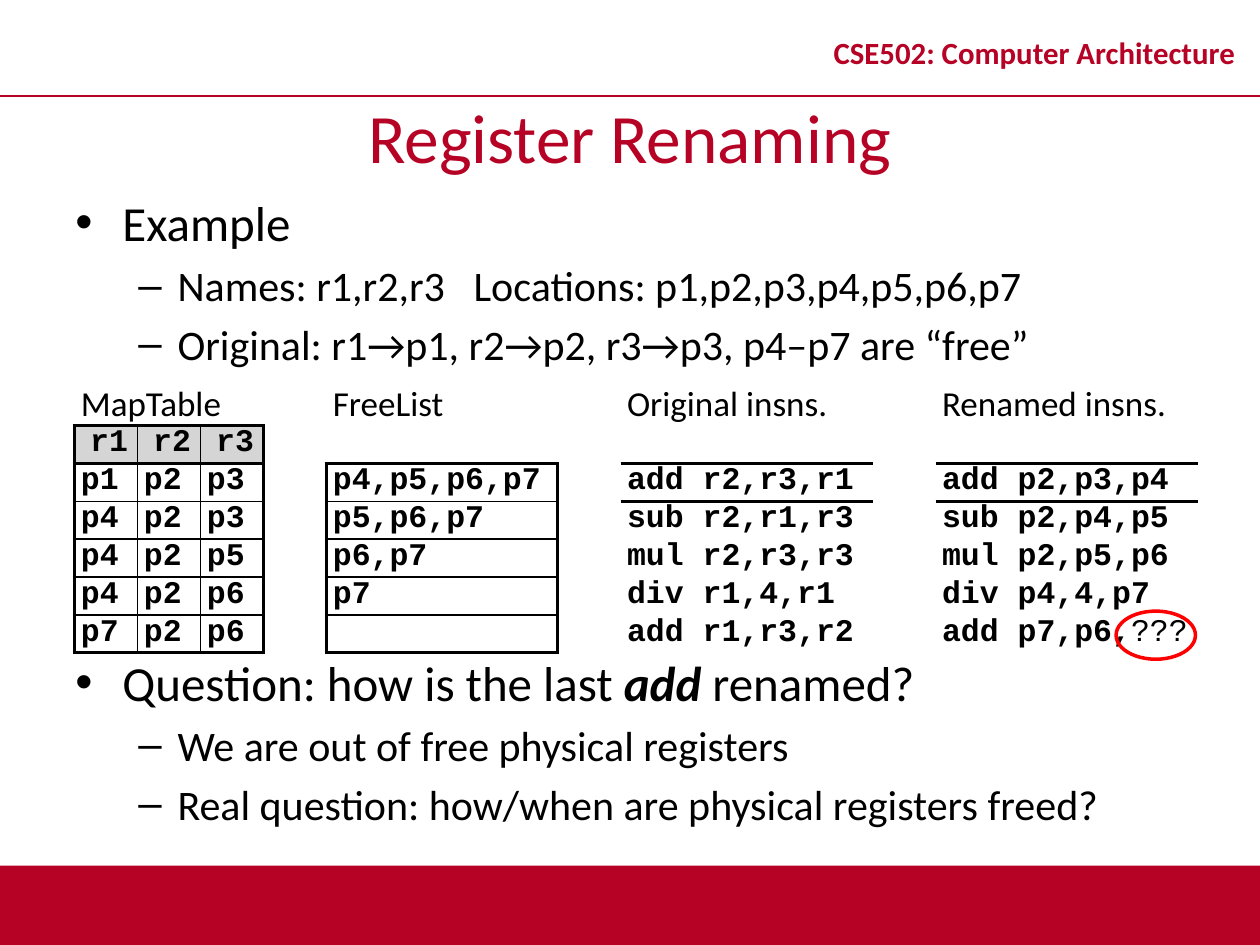
from dataclasses import dataclass

from lxml.etree import SubElement
from pptx import Presentation
from pptx.dml.color import RGBColor
from pptx.enum.shapes import MSO_CONNECTOR, MSO_SHAPE
from pptx.enum.text import MSO_ANCHOR, MSO_AUTO_SIZE, PP_ALIGN
from pptx.oxml.ns import qn
from pptx.util import Cm, Pt

RED = "B60225"
BLACK = "000000"
THICK, THIN = 2.25, 1
BODY_FONT, CODE_FONT = "Calibri", "Courier New"
NO_STYLE = "{2D5ABB26-0587-4C30-8999-92F81FD0307C}"


@dataclass(frozen=True)
class Run:
    text: str
    emphasis: bool = False
    tracking: float = 0


@dataclass(frozen=True)
class Bullet:
    runs: tuple[Run, ...]
    level: int = 0
    before: float = 0


@dataclass(frozen=True)
class Step:
    mapping: tuple[str, str, str]
    free: str
    original: str
    renamed: str
    unknown: str = ""


@dataclass(frozen=True)
class Frame:
    rows: range
    columns: range
    top_only: bool = False


BULLETS = (
    Bullet((Run("Example"),)),
    Bullet((Run("Names: r1,r2,r3"), Run(" ", tracking=10.85),
            Run("Locations: p1,p2,p3,p4,p5,p6,p7")), 1, 4.8),
    Bullet((Run("Original: r1→p1, r2→p2, r3→p3, p4–p7 are “free”"),), 1, 4.8),
    Bullet((Run("Question: how is the last "), Run("add", True), Run(" renamed?")), 0, 162),
    Bullet((Run("We are out of free physical registers"),), 1, 4.8),
    Bullet((Run("Real question: how/when are physical registers freed?"),), 1, 4.8),
)
BULLET_STYLES = (("•", 28, 0.95, 0.95), ("–", 24, 2.06, 0.79))

HEADINGS = {0: "MapTable", 4: "FreeList", 6: "Original insns.", 8: "Renamed insns."}
REGISTERS = ("r1", "r2", "r3")
STEPS = (
    Step(("p1", "p2", "p3"), "p4,p5,p6,p7", "add r2,r3,r1", "add p2,p3,p4"),
    Step(("p4", "p2", "p3"), "p5,p6,p7", "sub r2,r1,r3", "sub p2,p4,p5"),
    Step(("p4", "p2", "p5"), "p6,p7", "mul r2,r3,r3", "mul p2,p5,p6"),
    Step(("p4", "p2", "p6"), "p7", "div r1,4,r1", "div p4,4,p7"),
    Step(("p7", "p2", "p6"), "", "add r1,r3,r2", "add p7,p6,", "???"),
)
COLUMN_WIDTHS = (1.27, 1.27, 1.27, 1.27, 4.66, 1.27, 5.08, 1.27, 5.29)
ROW_HEIGHTS = (0.86,) + (0.72,) * (len(STEPS) + 1)
FRAMES = (
    Frame(range(1, 2), range(0, 3)),
    Frame(range(2, 7), range(0, 3)),
    Frame(range(2, 7), range(4, 5)),
    Frame(range(2, 3), range(6, 7), True),
    Frame(range(2, 3), range(8, 9), True),
)


def color(value: str) -> RGBColor:
    return RGBColor.from_string(value)


def set_font(font, name: str, size: float, ink: str = BLACK, bold: bool = False) -> None:
    font.name, font.size, font.bold = name, Pt(size), bold
    font.color.rgb = color(ink)


def draw_banner(slide) -> None:
    footer = slide.shapes.add_shape(MSO_SHAPE.RECTANGLE, 0, Cm(17.45), Cm(25.4), Cm(1.6))
    footer.shadow.inherit = False
    footer.fill.solid()
    footer.fill.fore_color.rgb = color(RED)
    footer.line.fill.background()

    rule = slide.shapes.add_connector(MSO_CONNECTOR.STRAIGHT, 0, Cm(1.93), Cm(25.4), Cm(1.93))
    rule.line.color.rgb = color(RED)
    rule.line.width = Pt(1)
    SubElement(rule._element.spPr, qn("a:effectLst"))

    course = slide.shapes.add_textbox(Cm(16.31), Cm(0.33), Cm(9.09), Cm(1.6)).text_frame
    course.word_wrap = True
    course.vertical_anchor = MSO_ANCHOR.MIDDLE
    paragraph = course.paragraphs[0]
    paragraph.text = "CSE502: Computer Architecture"
    paragraph.alignment = PP_ALIGN.CENTER
    paragraph.line_spacing = 0.8
    set_font(paragraph.font, BODY_FONT, 17.6, RED, True)


def draw_title(slide) -> None:
    title = slide.shapes.title
    title.left, title.top, title.width, title.height = 0, Cm(1.93), Cm(25.4), Cm(1.6)
    title.text_frame.auto_size = MSO_AUTO_SIZE.NONE
    title.text_frame.vertical_anchor = MSO_ANCHOR.MIDDLE
    paragraph = title.text_frame.paragraphs[0]
    paragraph.text = "Register Renaming"
    paragraph.alignment = PP_ALIGN.CENTER
    set_font(paragraph.font, BODY_FONT, 39.6, RED)


def draw_bullets(slide, bullets: tuple[Bullet, ...]) -> None:
    body = slide.shapes.add_textbox(Cm(1.27), Cm(3.75), Cm(22.86), Cm(13.59)).text_frame
    body.word_wrap = True
    for index, bullet in enumerate(bullets):
        paragraph = body.add_paragraph() if index else body.paragraphs[0]
        mark, size, margin, hanging = BULLET_STYLES[bullet.level]
        paragraph.level = bullet.level
        paragraph.space_before = Pt(bullet.before)
        properties = paragraph._p.get_or_add_pPr()
        properties.set("marL", str(Cm(margin)))
        properties.set("indent", str(-Cm(hanging)))
        SubElement(properties, qn("a:buFont"), typeface="Arial")
        SubElement(properties, qn("a:buChar"), char=mark)
        set_font(paragraph.font, BODY_FONT, size)
        for part in bullet.runs:
            run = paragraph.add_run()
            run.text = part.text
            if part.emphasis:
                run.font.bold = run.font.italic = True
            if part.tracking:
                run._r.get_or_add_rPr().set("spc", str(round(part.tracking * 100)))


def border(cell, side: str, width: float) -> None:
    line = SubElement(cell._tc.get_or_add_tcPr(), qn(f"a:ln{side}"), w=str(Pt(width)))
    SubElement(SubElement(line, qn("a:solidFill")), qn("a:srgbClr"), val=BLACK)


def draw_frame(table, frame: Frame) -> None:
    for row in frame.rows:
        for column in frame.columns:
            outer = {
                "L": column == frame.columns[0],
                "R": column == frame.columns[-1],
                "T": row == frame.rows[0],
                "B": row == frame.rows[-1],
            }
            for side in "T" if frame.top_only else "LRTB":
                border(table.cell(row, column), side, THICK if outer[side] else THIN)


def fill_cell(cell, text: str, row: int, unknown: str = "") -> None:
    paragraph = cell.text_frame.paragraphs[0]
    if row == 0:
        set_font(paragraph.font, BODY_FONT, 20)
    else:
        set_font(paragraph.font, CODE_FONT, 18, bold=True)
    paragraph.add_run().text = text
    if unknown:
        run = paragraph.add_run()
        run.text = unknown
        run.font.bold = False


def draw_renaming_table(slide) -> None:
    holder = slide.shapes.add_table(
        len(ROW_HEIGHTS), len(COLUMN_WIDTHS), Cm(1.5), Cm(7.72),
        Cm(sum(COLUMN_WIDTHS)), Cm(sum(ROW_HEIGHTS)))
    table = holder.table
    table.first_row = table.horz_banding = False
    table._tbl.tblPr.find(qn("a:tableStyleId")).text = NO_STYLE
    for column, width in zip(table.columns, COLUMN_WIDTHS):
        column.width = Cm(width)
    for row, height in zip(table.rows, ROW_HEIGHTS):
        row.height = Cm(height)
    for frame in FRAMES:
        draw_frame(table, frame)

    contents = [HEADINGS, dict(enumerate(REGISTERS))]
    contents += [{**dict(enumerate(step.mapping)), 4: step.free, 6: step.original, 8: step.renamed}
                 for step in STEPS]
    unknowns = ["", ""] + [step.unknown for step in STEPS]
    table.cell(0, 0).merge(table.cell(0, 2))
    for row, texts in enumerate(contents):
        for column in range(len(COLUMN_WIDTHS)):
            cell = table.cell(row, column)
            cell.margin_left = Cm(0.13)
            cell.margin_right = cell.margin_top = cell.margin_bottom = 0
            cell.fill.background()
            if texts.get(column):
                fill_cell(cell, texts[column], row, unknowns[row] if column == 8 else "")
            else:
                SubElement(cell.text_frame.paragraphs[0]._p, qn("a:endParaRPr"), sz="1200")
    for column in range(len(REGISTERS)):
        register = table.cell(1, column)
        register.fill.solid()
        register.fill.fore_color.rgb = color("D5D5D5")
        register.text_frame.paragraphs[0].alignment = PP_ALIGN.CENTER


def draw_highlight(slide) -> None:
    highlight = slide.shapes.add_shape(MSO_SHAPE.OVAL, Cm(22.5), Cm(12.32), Cm(1.6), Cm(0.97))
    highlight.shadow.inherit = False
    highlight.fill.background()
    highlight.line.color.rgb = color("FF0000")
    highlight.line.width = Pt(2)


def main() -> None:
    deck = Presentation()
    deck.slide_width, deck.slide_height = Cm(25.4), Cm(19.05)
    slide = deck.slides.add_slide(deck.slide_layouts[5])
    draw_banner(slide)
    draw_title(slide)
    draw_bullets(slide, BULLETS)
    draw_renaming_table(slide)
    draw_highlight(slide)
    deck.save("out.pptx")


if __name__ == "__main__":
    main()
